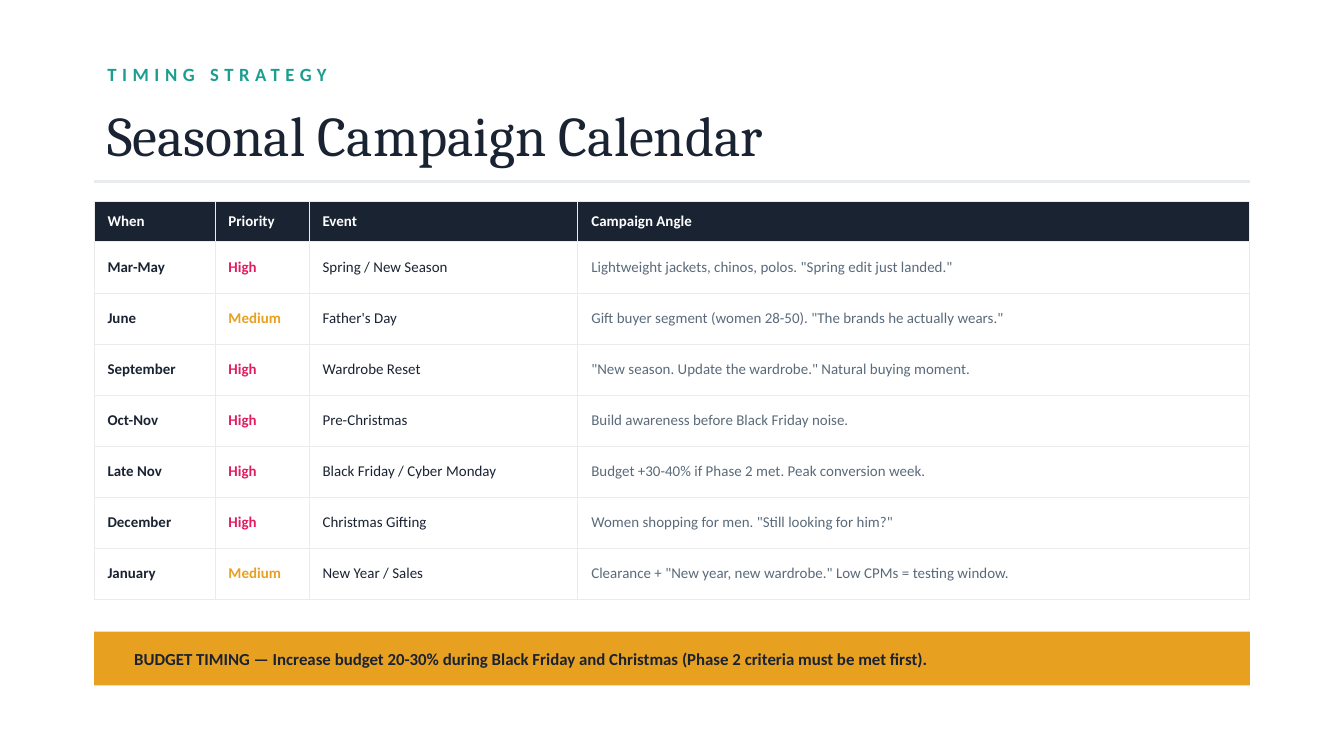
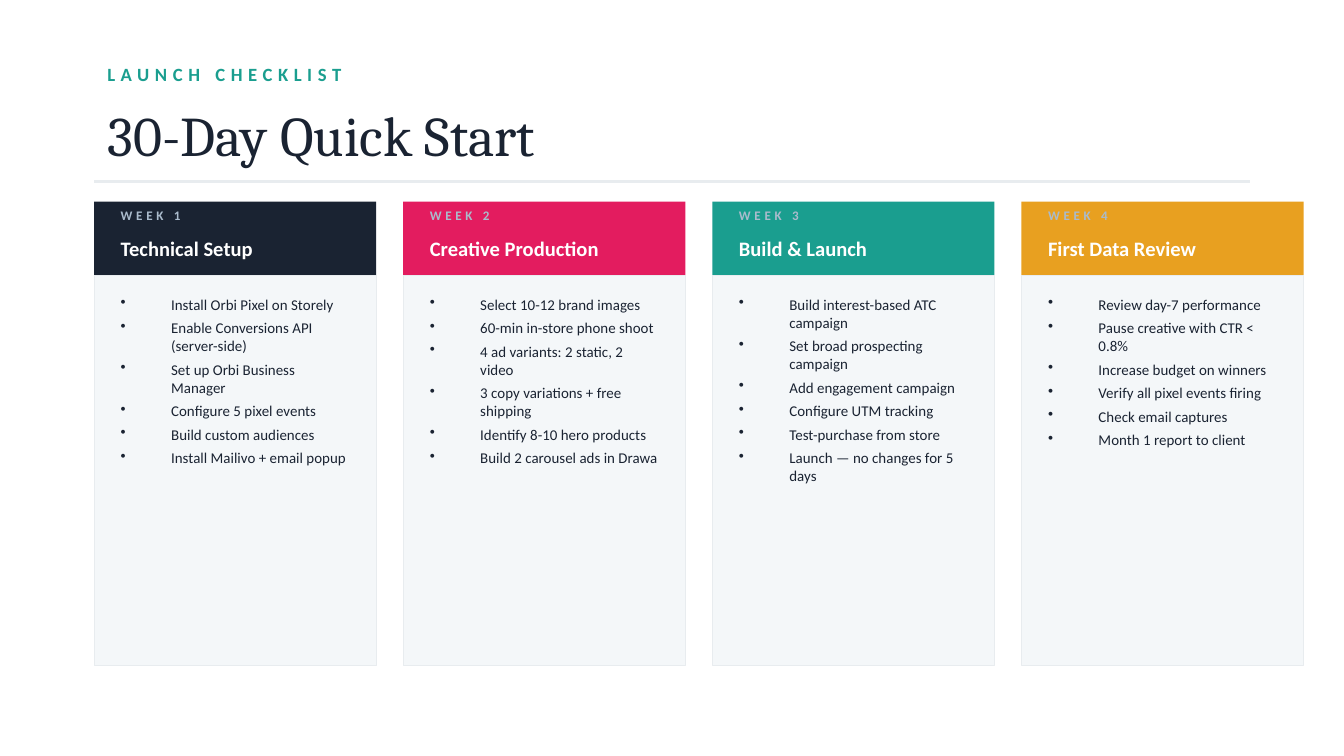
from lxml import etree
from pptx import Presentation
from pptx import util as u
from pptx.dml.color import RGBColor
from pptx.enum import shapes, text
from pptx.oxml import ns

NAVY = RGBColor(0x1A, 0x23, 0x32)
PINK = RGBColor(0xE3, 0x1C, 0x5F)
TEAL = RGBColor(0x1A, 0x9E, 0x8F)
AMBER = RGBColor(0xE8, 0xA0, 0x20)
SLATE = RGBColor(0x5A, 0x6A, 0x7A)
MIST = RGBColor(0xAA, 0xBB, 0xCC)
RULE = RGBColor(0xE8, 0xEC, 0xEF)
PANEL = RGBColor(0xF4, 0xF7, 0xF9)
WHITE = RGBColor(0xFF, 0xFF, 0xFF)

BODY_FONT = "Calibri"
TITLE_FONT = "Cambria"

SLIDE_WIDTH = u.Inches(10)
SLIDE_HEIGHT = SLIDE_WIDTH * 9 // 16
UNIT = 0.1
MARGIN = 7
CONTENT_WIDTH = 86
CONTENT_TOP = 15
CARD_WIDTH = 21
CARD_STEP = 23
CARD_HEADER = 5.5
CARD_BODY = 29

CALENDAR_HEADER = ("When", "Priority", "Event", "Campaign Angle")
CALENDAR_COLUMNS = (9, 7, 20, 50)
CALENDAR = [
    ("Mar-May", "High", "Spring / New Season",
     'Lightweight jackets, chinos, polos. "Spring edit just landed."'),
    ("June", "Medium", "Father's Day",
     'Gift buyer segment (women 28-50). "The brands he actually wears."'),
    ("September", "High", "Wardrobe Reset",
     '"New season. Update the wardrobe." Natural buying moment.'),
    ("Oct-Nov", "High", "Pre-Christmas",
     "Build awareness before Black Friday noise."),
    ("Late Nov", "High", "Black Friday / Cyber Monday",
     "Budget +30-40% if Phase 2 met. Peak conversion week."),
    ("December", "High", "Christmas Gifting",
     'Women shopping for men. "Still looking for him?"'),
    ("January", "Medium", "New Year / Sales",
     'Clearance + "New year, new wardrobe." Low CPMs = testing window.'),
]
PRIORITY_COLORS = {"High": PINK, "Medium": AMBER}

WEEKS = [
    ("Technical Setup", NAVY, [
        "Install Orbi Pixel on Storely",
        "Enable Conversions API (server-side)",
        "Set up Orbi Business Manager",
        "Configure 5 pixel events",
        "Build custom audiences",
        "Install Mailivo + email popup",
    ]),
    ("Creative Production", PINK, [
        "Select 10-12 brand images",
        "60-min in-store phone shoot",
        "4 ad variants: 2 static, 2 video",
        "3 copy variations + free shipping",
        "Identify 8-10 hero products",
        "Build 2 carousel ads in Drawa",
    ]),
    ("Build & Launch", TEAL, [
        "Build interest-based ATC campaign",
        "Set broad prospecting campaign",
        "Add engagement campaign",
        "Configure UTM tracking",
        "Test-purchase from store",
        "Launch — no changes for 5 days",
    ]),
    ("First Data Review", AMBER, [
        "Review day-7 performance",
        "Pause creative with CTR < 0.8%",
        "Increase budget on winners",
        "Verify all pixel events firing",
        "Check email captures",
        "Month 1 report to client",
    ]),
]


def grid(*cells):
    return [u.Inches(cell * UNIT) for cell in cells]


def add_bullet(paragraph, indent=27):
    properties = paragraph._p.get_or_add_pPr()
    properties.set("marL", str(u.Pt(indent)))
    properties.set("indent", str(-u.Pt(indent)))
    etree.SubElement(properties, ns.qn("a:buSzPct")).set("val", "100000")
    etree.SubElement(properties, ns.qn("a:buChar")).set("char", "•")


def write(frame, lines, size=8, color=NAVY, font=BODY_FONT, bold=False,
          spacing=0, bullets=False, after=0, anchor=text.MSO_ANCHOR.MIDDLE):
    frame.word_wrap = True
    frame.vertical_anchor = anchor
    for index, line in enumerate(lines):
        paragraph = frame.add_paragraph() if index else frame.paragraphs[0]
        if bullets:
            add_bullet(paragraph)
        paragraph.alignment = text.PP_ALIGN.LEFT
        paragraph.space_after = u.Pt(after)
        run = paragraph.add_run()
        run.text = line
        run.font.size = u.Pt(size)
        run.font.name = font
        run.font.bold = bold
        run.font.color.rgb = color
        if spacing:
            run._r.get_or_add_rPr().set("spc", str(spacing * 100))


def add_text(slide, area, *lines, **style):
    write(slide.shapes.add_textbox(*grid(*area)).text_frame, lines, **style)


def add_box(slide, area, fill, line=None):
    shape = slide.shapes.add_shape(shapes.MSO_SHAPE.RECTANGLE, *grid(*area))
    shape.shadow.inherit = False
    shape.fill.solid()
    shape.fill.fore_color.rgb = fill
    if line is None:
        shape.line.fill.background()
    else:
        shape.line.color.rgb = line
        shape.line.width = u.Pt(0.5)


def add_rule(slide, row):
    rule = slide.shapes.add_connector(
        shapes.MSO_CONNECTOR.STRAIGHT,
        *grid(MARGIN, row, MARGIN + CONTENT_WIDTH, row))
    rule.line.color.rgb = RULE
    rule.line.width = u.Pt(1.5)
    etree.SubElement(rule._element.spPr, ns.qn("a:effectLst"))


def add_titled_slide(presentation, label, heading):
    slide = presentation.slides.add_slide(presentation.slide_layouts[5])
    slide.background.fill.solid()
    slide.background.fill.fore_color.rgb = WHITE
    add_text(slide, (MARGIN, 4, 40, 3), label,
             size=10, color=TEAL, bold=True, spacing=3)
    title = slide.shapes.title
    title.left, title.top, title.width, title.height = grid(MARGIN, 7, 80, 6)
    title.text_frame.auto_size = text.MSO_AUTO_SIZE.NONE
    write(title.text_frame, [heading], size=30, font=TITLE_FONT)
    add_rule(slide, 13.5)
    return slide


def add_borders(cell):
    properties = cell._tc.get_or_add_tcPr()
    for side in ("lnL", "lnR", "lnT", "lnB"):
        border = etree.SubElement(properties, ns.qn(f"a:{side}"))
        border.set("w", str(u.Pt(0.5)))
        fill = etree.SubElement(border, ns.qn("a:solidFill"))
        etree.SubElement(fill, ns.qn("a:srgbClr")).set("val", str(RULE))


def fill_cell(cell, content, fill=None, **style):
    add_borders(cell)
    if fill is None:
        cell.fill.background()
    else:
        cell.fill.solid()
        cell.fill.fore_color.rgb = fill
    write(cell.text_frame, [content], **style)
    cell.vertical_anchor = text.MSO_ANCHOR.MIDDLE


def add_calendar(slide):
    heights = [3] + [3.8] * len(CALENDAR)
    table = slide.shapes.add_table(
        len(heights), len(CALENDAR_COLUMNS),
        *grid(MARGIN, CONTENT_TOP, CONTENT_WIDTH, sum(heights))).table
    table.horz_banding = False
    for column, width in zip(table.columns, grid(*CALENDAR_COLUMNS)):
        column.width = width
    for row, height in zip(table.rows, grid(*heights)):
        row.height = height
    for column, heading in enumerate(CALENDAR_HEADER):
        fill_cell(table.cell(0, column), heading, NAVY, color=WHITE, bold=True)
    for row, entry in enumerate(CALENDAR, 1):
        colors = (NAVY, PRIORITY_COLORS[entry[1]], NAVY, SLATE)
        for column, (content, color) in enumerate(zip(entry, colors)):
            fill_cell(table.cell(row, column), content,
                      color=color, bold=column < 2)


def add_week(slide, index, heading, color, tasks):
    left = MARGIN + index * CARD_STEP
    inner_left, inner_width = left + 1, CARD_WIDTH - 2
    body_top = CONTENT_TOP + CARD_HEADER
    add_box(slide, (left, CONTENT_TOP, CARD_WIDTH, CARD_HEADER), color)
    add_text(slide, (inner_left, CONTENT_TOP, inner_width, 2),
             f"WEEK {index + 1}", size=7, color=MIST, bold=True, spacing=2)
    add_text(slide, (inner_left, CONTENT_TOP + 2, inner_width, 3), heading,
             size=11, color=WHITE, bold=True)
    add_box(slide, (left, body_top, CARD_WIDTH, CARD_BODY), PANEL, RULE)
    add_text(slide, (inner_left, body_top + 1, inner_width, CARD_BODY - 2),
             *tasks, bullets=True, after=3, anchor=text.MSO_ANCHOR.TOP)


def main():
    presentation = Presentation()
    presentation.slide_width = SLIDE_WIDTH
    presentation.slide_height = SLIDE_HEIGHT

    slide = add_titled_slide(presentation, "TIMING STRATEGY",
                             "Seasonal Campaign Calendar")
    add_calendar(slide)
    add_box(slide, (MARGIN, 47, CONTENT_WIDTH, 4), AMBER)
    add_text(slide, (MARGIN + 2, 47, CONTENT_WIDTH - 4, 4),
             "BUDGET TIMING — Increase budget 20-30% during Black Friday and "
             "Christmas (Phase 2 criteria must be met first).",
             size=9, bold=True)

    slide = add_titled_slide(presentation, "LAUNCH CHECKLIST",
                             "30-Day Quick Start")
    for index, week in enumerate(WEEKS):
        add_week(slide, index, *week)

    presentation.save("out.pptx")


if __name__ == "__main__":
    main()
